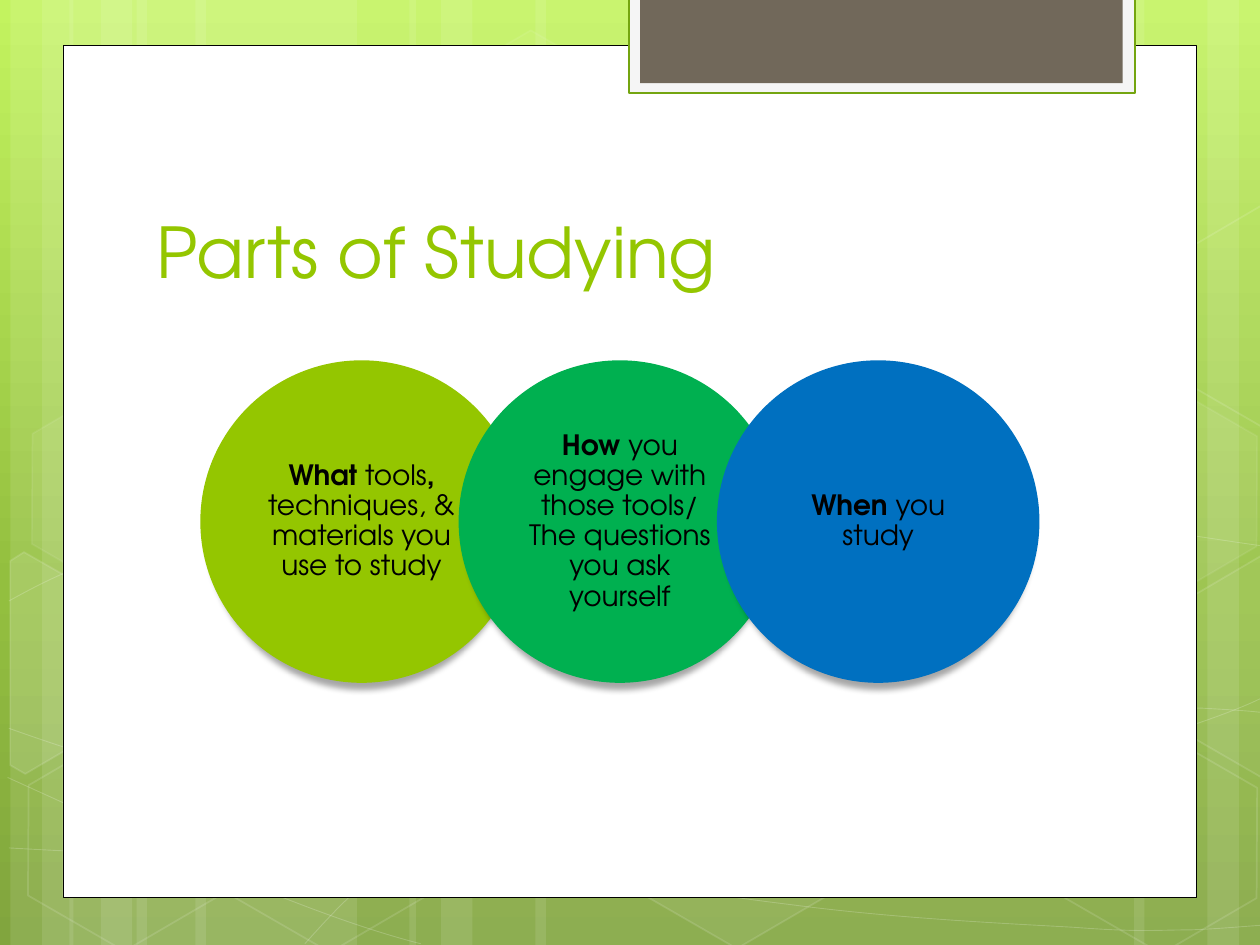
from copy import deepcopy
from dataclasses import dataclass
from math import cos, radians, sin
from typing import NamedTuple, Optional

from lxml.etree import SubElement
from pptx import Presentation
from pptx.dml.color import RGBColor as RGB
from pptx.enum.shapes import MSO_SHAPE as SHAPE
from pptx.enum.text import MSO_ANCHOR as ANCHOR, MSO_AUTO_SIZE as AUTOSIZE, PP_ALIGN as ALIGN
from pptx.oxml.ns import qn
from pptx.util import Inches, Pt


@dataclass(frozen=True)
class Theme:
    font: str = "TeX Gyre Adventor"
    title_size: int = 40
    body_size: int = 16
    white: str = "FFFFFF"
    black: str = "000000"
    lime: str = "94C600"
    green: str = "00B050"
    blue: str = "0070C0"
    tab: str = "71685A"
    tab_frame: str = "F5F5F5"
    tab_line: str = "74A510"
    background: tuple = ((0, "C3F35F"), (0.62, "93BF3F"), (1, "81A53E"))


class Paint(NamedTuple):
    fill: Optional[str] = None
    fill_alpha: int = 100
    line: Optional[str] = None
    line_alpha: int = 100
    width: float = 1


class Hexagon(NamedTuple):
    col: float
    row: float
    fill_alpha: int
    line_alpha: int


class CutHexagon(NamedTuple):
    center: tuple
    corners: tuple  # as they stand after turning
    fill_alpha: int


class Circle(NamedTuple):
    color: str
    runs: tuple  # (text, bold)


T = Theme()
TILT = 30  # degrees, all hexagons
prs = Presentation()
prs.slide_width, prs.slide_height = Inches(10), Inches(7.5)
COL, ROW = prs.slide_width / 10, prs.slide_height / 7.5  # page grid


def set_alpha(parent, percent: int) -> None:
    if percent < 100:
        for color in parent.iter(qn("a:srgbClr")):
            SubElement(color, qn("a:alpha"), val=str(percent * 1000))


def paint(sp, look: Paint) -> None:
    sp.shadow.inherit = False
    if look.fill:
        sp.fill.solid()
        sp.fill.fore_color.rgb = RGB.from_string(look.fill)
        set_alpha(sp.element.spPr.find(qn("a:solidFill")), look.fill_alpha)
    else:
        sp.fill.background()
    if look.line:
        sp.line.color.rgb = RGB.from_string(look.line)
        sp.line.width = Pt(look.width)
        set_alpha(sp.element.spPr.find(qn("a:ln")), look.line_alpha)
    else:
        sp.line.fill.background()


def add_box(s, kind, col: float, row: float, cols: float, rows: float, look: Paint):
    sp = s.shapes.add_shape(kind, *(round(v) for v in (col * COL, row * ROW, cols * COL, rows * ROW)))
    paint(sp, look)
    return sp


def add_outline(s, points, look: Paint, close: bool = False):
    (x, y), *rest = [(round(c * COL), round(r * ROW)) for c, r in points]
    builder = s.shapes.build_freeform(x, y)
    builder.add_line_segments(rest, close=close)
    sp = builder.convert_to_shape()
    paint(sp, look)
    return sp


def add_wave(s, knots: tuple) -> None:
    """Draw cubic Bezier curves given as start, control, control, end, ..."""
    sp = add_outline(s, knots, Paint(line=T.white, line_alpha=20, width=0.5))
    outline = next(sp.element.iter(qn("a:path")))
    lines = outline.findall(qn("a:lnTo"))
    for i in range(0, len(lines), 3):
        curve = SubElement(outline, qn("a:cubicBezTo"))
        for line in lines[i:i + 3]:
            curve.append(line[0])
            outline.remove(line)


def hexagon_paint(fill_alpha: int, line_alpha: int) -> Paint:
    return Paint(T.white if fill_alpha else None, fill_alpha, T.white, line_alpha)


def add_cut_hexagon(s, h: CutHexagon) -> None:
    (cx, cy), c, n = h.center, cos(radians(TILT)), sin(radians(TILT))
    upright = [(cx + (x - cx) * c + (y - cy) * n, cy + (y - cy) * c - (x - cx) * n) for x, y in h.corners]
    add_outline(s, upright, hexagon_paint(h.fill_alpha, 12), close=True).rotation = TILT


def add_shadow(sp) -> None:
    effects = sp.element.spPr.find(qn("a:effectLst"))
    shadow = SubElement(effects, qn("a:outerShdw"), blurRad=str(Pt(3.5)), dist=str(Pt(4)),
                        dir="5400000", sx="96000", rotWithShape="0")
    SubElement(shadow, qn("a:srgbClr"), val=T.black)
    set_alpha(shadow, 34)


def add_circle(s, col: float, row: float, size: float, circle: Circle) -> None:
    sp = add_box(s, SHAPE.OVAL, col, row, size, size, Paint(circle.color))
    add_shadow(sp)
    tf = sp.text_frame
    tf.word_wrap, tf.vertical_anchor = True, ANCHOR.MIDDLE
    tf.margin_left = tf.margin_right = Inches(0.14)
    tf.margin_top = tf.margin_bottom = Inches(0.02)
    p = tf.paragraphs[0]
    p.alignment, p.line_spacing = ALIGN.CENTER, 0.9
    p.font.name, p.font.size = T.font, Pt(T.body_size)
    p.font.color.rgb = RGB.from_string(T.black)
    for text, bold in circle.runs:
        r = p.add_run()
        r.text, r.font.bold = text, bold


def set_background(s) -> None:
    fill = s.background.fill
    fill.gradient()
    fill.gradient_angle = 270
    stops = next(s.element.iter(qn("a:gsLst")))
    stops.append(deepcopy(stops[0]))
    for stop, (position, color) in zip(fill.gradient_stops, T.background):
        stop.position, stop.color.rgb = position, RGB.from_string(color)


# Vertical bands: left and width, in twelfths of a page column
BANDS = ((13, 21), (1, 6), (4, 10), (18.6, 21), (6.6, 6), (9.6, 10),
         (88, 21), (115, 6), (108, 10), (51, 37), (39, 6), (42, 10))
WAVES = (
    ((0.07, 6.73), (0.61, 6.76), (1.15, 6.79), (1.9, 6.78), (2.65, 6.77), (3.58, 6.75), (4.58, 6.65),
     (5.58, 6.55), (7, 6.36), (7.92, 6.17), (8.83, 5.98), (9.77, 5.68), (10.07, 5.51)),
    ((0.07, 4.77), (0.36, 4.61), (0.65, 4.46), (1.21, 4.31), (1.78, 4.16), (2.59, 3.94), (3.47, 3.87),
     (4.36, 3.8), (5.44, 3.79), (6.54, 3.87), (7.64, 3.95), (9.47, 4.26), (10.07, 4.34)),
    ((0.06, 6.17), (1.27, 6.72), (2.47, 7.27), (3.34, 7.49)),
    ((0.07, 5.78), (0.38, 5.89), (0.7, 6), (1.28, 6.16), (1.86, 6.31), (2.73, 6.56), (3.57, 6.73),
     (4.4, 6.9), (5.45, 7.08), (6.28, 7.18), (7.11, 7.29), (8, 7.33), (8.53, 7.36),
     (9.05, 7.4), (9.19, 7.38), (9.45, 7.38), (9.71, 7.37), (9.89, 7.35), (10.07, 7.34)),
    ((2.42, 7.49), (2.6, 7.29), (2.78, 7.09), (3.02, 6.91), (3.26, 6.73), (3.6, 6.53), (3.88, 6.39),
     (4.16, 6.25), (4.33, 6.19), (4.7, 6.09), (5.06, 5.99), (5.73, 5.85), (6.08, 5.78),
     (6.44, 5.71), (6.49, 5.71), (6.8, 5.69), (7.11, 5.66), (7.6, 5.63), (7.94, 5.62),
     (8.29, 5.61), (8.86, 5.62), (8.86, 5.62), (9.08, 5.62), (9.31, 5.62), (9.53, 5.62),
     (9.71, 5.63), (9.88, 5.64), (9.97, 5.65), (10.06, 5.66), (10.03, 5.65), (10.06, 5.66)),
)
HEXAGONS = (
    Hexagon(3.34, 0.36, 4, 8), Hexagon(4.97, 5.89, 6, 12), Hexagon(0.11, 5.91, 0, 12),
    Hexagon(0.14, 3.12, 7, 8), Hexagon(1.74, 5.92, 0, 12), Hexagon(7.53, 4.53, 10, 12),
    Hexagon(8.34, 5.93, 0, 12), Hexagon(8.34, 3.14, 7, 8),
)
LEFT_CUT = ((0.08, 4.45), (0.19, 4.38), (0.96, 4.82), (0.95, 5.7), (0.2, 6.14), (0.08, 6.07))
RIGHT_CUT = ((9.26, 4.85), (10.01, 4.41), (10.09, 4.46), (10.09, 6.13), (10.02, 6.17), (9.26, 5.73))
UPPER_CUT = tuple((x, y - 2.78) for x, y in RIGHT_CUT)
CUT_HEXAGONS = (CutHexagon((0.36, 5.35), LEFT_CUT, 10), CutHexagon((9.85, 5.2), RIGHT_CUT, 4),
                CutHexagon((9.85, 2.41), UPPER_CUT, 0))
CIRCLES = (
    Circle(T.lime, (("What ", True), ("tools", False), (", ", True),
                    ("techniques, & materials you use to study", False))),
    Circle(T.green, (("How", True), (" you engage with those tools/ The questions you ask yourself", False))),
    Circle(T.blue, (("When ", True), ("you study", False))),
)


def main() -> None:
    s = prs.slides.add_slide(prs.slide_layouts[5])
    set_background(s)
    # Background decoration
    for left, width in BANDS:
        add_box(s, SHAPE.RECTANGLE, left / 12, 0, width / 12, 7.5, Paint(T.white, 10))
    for knots in WAVES:
        add_wave(s, knots)
    for h in HEXAGONS:
        sp = add_box(s, SHAPE.HEXAGON, h.col, h.row, 1.75, 1.52, hexagon_paint(h.fill_alpha, h.line_alpha))
        sp.adjustments[0], sp.rotation = 0.285, TILT
    for cut in CUT_HEXAGONS:
        add_cut_hexagon(s, cut)
    # Page panel and tab
    add_box(s, SHAPE.RECTANGLE, 0.5, 0.36, 9, 6.76, Paint(T.white, line=T.black, width=0.5))
    add_box(s, SHAPE.RECTANGLE, 4.99, -0.02, 4.02, 0.76, Paint(T.tab_frame, line=T.tab_line, width=1.25))
    add_box(s, SHAPE.RECTANGLE, 5.08, -0.02, 3.83, 0.68, Paint(T.tab))
    # Title, brought in front of the panel
    title = s.shapes.title
    title.element.getparent().append(title.element)
    title.left, title.top, title.width, title.height = (Inches(v) for v in (1.14, 1.12, 7.68, 1.25))
    tf = title.text_frame
    tf.text = "Parts of Studying"
    tf.auto_size, tf.vertical_anchor = AUTOSIZE.NONE, ANCHOR.BOTTOM
    p = tf.paragraphs[0]
    p.alignment = ALIGN.LEFT
    p.font.name, p.font.size = T.font, Pt(T.title_size)
    p.font.color.rgb = RGB.from_string(T.lime)
    # Overlapping circles
    for i, circle in enumerate(CIRCLES):
        add_circle(s, 1.59 + i * 2.05, 2.86, 2.56, circle)
    prs.save("out.pptx")


if __name__ == "__main__":
    main()
